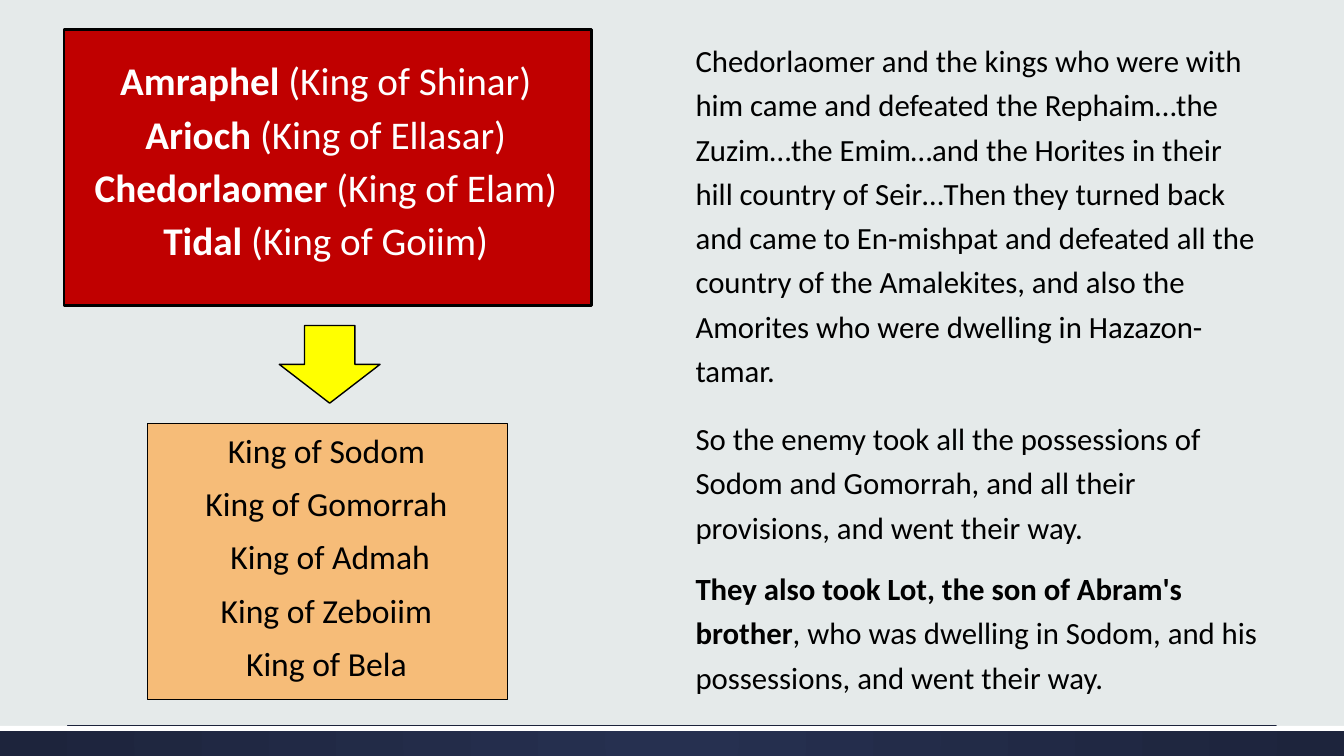
from lxml.etree import SubElement
from pptx import Presentation
from pptx.dml.color import RGBColor
from pptx.enum.shapes import MSO_CONNECTOR as Connector, MSO_SHAPE as Shape
from pptx.enum.text import MSO_ANCHOR as Anchor, PP_ALIGN as Align
from pptx.oxml.ns import qn
from pptx.util import Inches, Pt

# Content: each paragraph is a list of (text, bold) runs
INVADERS = [
    [("Amraphel", True), (" (King of Shinar) ", False)],
    [("Arioch", True), (" (King of Ellasar) ", False)],
    [("Chedorlaomer", True), (" (King of Elam) ", False)],
    [("Tidal", True), (" (King of Goiim) ", False)],
]
DEFENDERS = [
    [(king, False)] for king in (
        "King of Sodom ", "King of Gomorrah ", "King of Admah",
        "King of Zeboiim ", "King of Bela ")
]
# Passages: top, height, runs
PASSAGES = [
    (0.29, 3.66, [(
        "Chedorlaomer and the kings who were with him came and defeated "
        "the Rephaim…the Zuzim…the Emim…and the Horites in their hill "
        "country of Seir…Then they turned back and came to En-mishpat and "
        "defeated all the country of the Amalekites, and also the Amorites "
        "who were dwelling in Hazazon-tamar.", False)]),
    (4.04, 1.4, [(
        "So the enemy took all the possessions of Sodom and Gomorrah, and "
        "all their provisions, and went their way.", False)]),
    (5.53, 1.43, [
        ("They also took Lot, the son of Abram's brother", True),
        (", who was dwelling in Sodom, and his possessions, and went "
         "their way.", False)]),
]

BACKGROUND = RGBColor(0xE5, 0xEA, 0xEA)
NAVY = RGBColor(0x26, 0x30, 0x50)
DARK_NAVY = RGBColor(0x1D, 0x24, 0x3C)
RED = RGBColor(0xC0, 0x00, 0x00)
ORANGE = RGBColor(0xF6, 0xBC, 0x78)
YELLOW = RGBColor(0xFF, 0xFF, 0x00)
WHITE = RGBColor(0xFF, 0xFF, 0xFF)
BLACK = RGBColor(0x00, 0x00, 0x00)

# Layout in inches
WIDTH, HEIGHT = 13.33, 7.5
FOOTER_TOP, STRIPE_HEIGHT = 7.2, 0.05
RULE_MARGIN = 0.67
KINGS_CENTER, KINGS_HEIGHT = 3.25, 2.74
PASSAGE_LEFT, PASSAGE_WIDTH = 6.75, 5.82

deck = Presentation()
deck.slide_width, deck.slide_height = Inches(WIDTH), Inches(HEIGHT)
slide = deck.slides.add_slide(deck.slide_layouts[6])
slide.background.fill.solid()
slide.background.fill.fore_color.rgb = BACKGROUND


def add_block(kind, left, top, width, height, color, border=0):
    block = slide.shapes.add_shape(
        kind, Inches(left), Inches(top), Inches(width), Inches(height))
    block.shadow.inherit = False
    block.fill.solid()
    block.fill.fore_color.rgb = color
    if border:
        block.line.color.rgb = BLACK
        block.line.width = Pt(border)
    else:
        block.line.fill.background()
    return block


def write(frame, paragraphs, size, color, spacing, align):
    frame.word_wrap = True
    for index, runs in enumerate(paragraphs):
        paragraph = frame.add_paragraph() if index else frame.paragraphs[0]
        paragraph.alignment = align
        paragraph.line_spacing = spacing
        paragraph.space_before = Pt(18 if index else 0)
        properties = paragraph._p.get_or_add_pPr()
        properties.set("marL", str(Inches(0.05)))
        properties.set("indent", "0")
        for words, bold in runs:
            run = paragraph.add_run()
            run.text = words
            run.font.name, run.font.size = "Calibri", Pt(size)
            run.font.bold = bold
            run.font.color.rgb = color


def add_kings(top, width, color, border, kings, size, ink, spacing):
    box = add_block(Shape.RECTANGLE, KINGS_CENTER - width / 2, top, width,
                    KINGS_HEIGHT, color, border)
    box.text_frame.vertical_anchor = Anchor.MIDDLE
    write(box.text_frame, kings, size, ink, spacing, Align.CENTER)


# Footer band with a radial gradient, white stripe and thin rule
footer = add_block(Shape.RECTANGLE, 0, FOOTER_TOP, WIDTH,
                   HEIGHT - FOOTER_TOP, NAVY)
footer.fill.gradient()
for stop, shade in zip(footer.fill.gradient_stops, (NAVY, DARK_NAVY)):
    stop.color.rgb = shade
gradient = footer._element.spPr.find(qn("a:gradFill"))
gradient.remove(gradient.find(qn("a:lin")))
radial = SubElement(gradient, qn("a:path"), {"path": "circle"})
SubElement(radial, qn("a:fillToRect"),
           {side: "50000" for side in ("l", "t", "r", "b")})
add_block(Shape.RECTANGLE, 0, FOOTER_TOP, WIDTH, STRIPE_HEIGHT, WHITE)
rule = slide.shapes.add_connector(
    Connector.STRAIGHT, Inches(RULE_MARGIN), Inches(FOOTER_TOP),
    Inches(WIDTH - RULE_MARGIN), Inches(FOOTER_TOP))
rule.line.color.rgb = DARK_NAVY
rule.line.width = Pt(0.5)
SubElement(rule._element.spPr, qn("a:effectLst"))

# Two alliances and the attack arrow between them
add_kings(4.2, 3.57, ORANGE, 1, DEFENDERS, 24, BLACK, 0.7)
add_kings(0.29, 5.23, RED, 2, INVADERS, 28, WHITE, 0.6)
add_block(Shape.DOWN_ARROW, 2.77, 3.23, 1, 0.77, YELLOW, 1)

# Passages on the right
for top, height, runs in PASSAGES:
    passage = slide.shapes.add_textbox(
        Inches(PASSAGE_LEFT), Inches(top), Inches(PASSAGE_WIDTH),
        Inches(height))
    write(passage.text_frame, [runs], 22, BLACK, 1.2, Align.LEFT)

deck.save("out.pptx")
